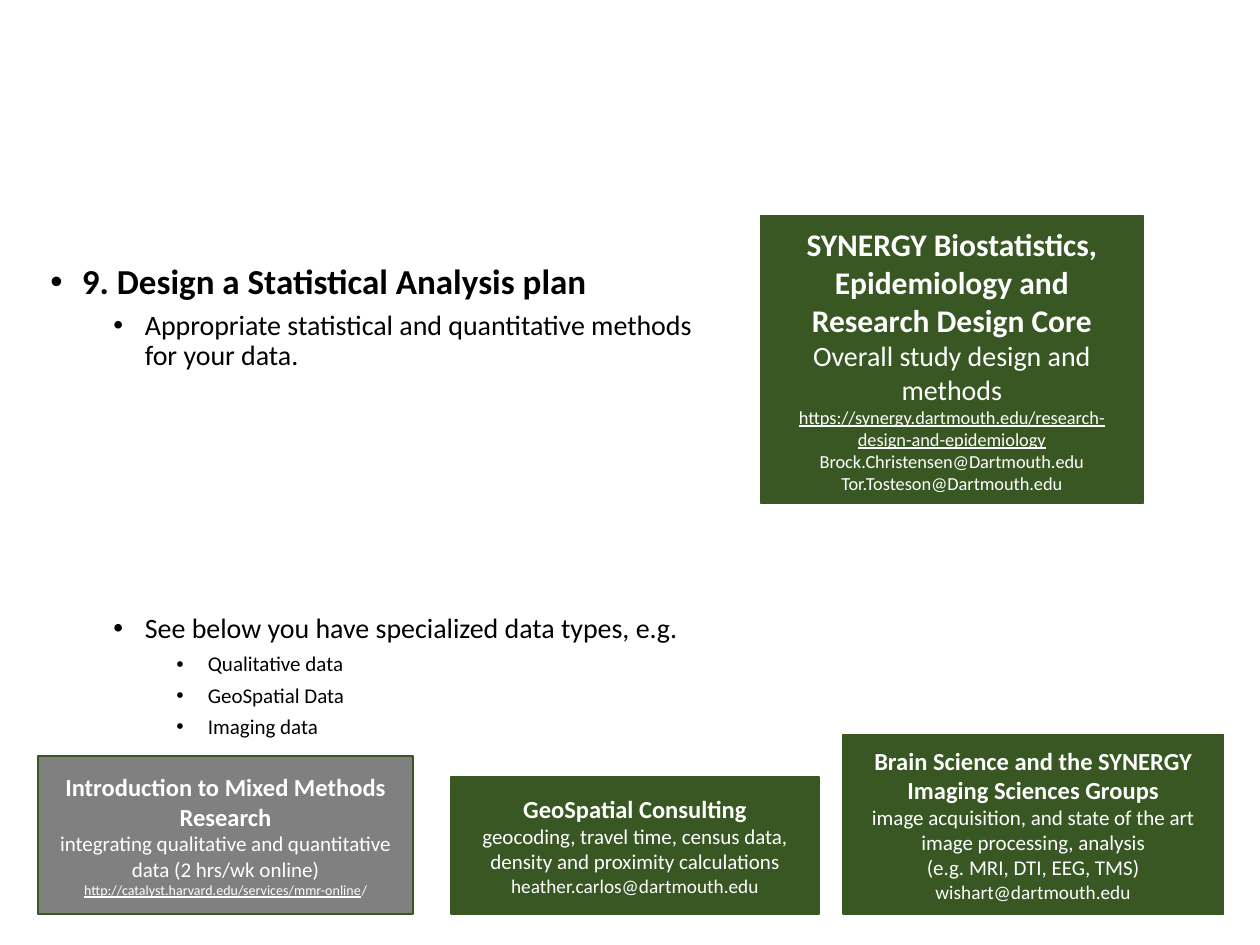
import pptx
import pptx.util
import pptx.dml.color
import pptx.enum.shapes
import pptx.enum.text
import lxml.etree
from dataclasses import dataclass

Pt = pptx.util.Pt
Inches = pptx.util.Inches
RGB = pptx.dml.color.RGBColor


@dataclass(frozen=True)
class Theme:
    font: str = "Calibri"
    ink: RGB = RGB(0, 0, 0)
    paper: RGB = RGB(255, 255, 255)
    green: RGB = RGB(0x38, 0x57, 0x23)
    grey: RGB = RGB(0x80, 0x80, 0x80)
    outline_sizes: tuple = (20, 16, 12)
    core_heading: float = 18
    core_body: float = 16
    core_contact: float = 10.5
    heading: float = 14
    body: float = 12
    contact: float = 11
    link: float = 8


theme = Theme()

deck = pptx.Presentation()
deck.slide_width, deck.slide_height = Inches(10), Inches(7.5)
column = deck.slide_width / 100
row = deck.slide_height / 100


def style(font, size, color, bold=False):
    font.name = theme.font
    font.size = Pt(size)
    font.bold = bold
    font.color.rgb = color


def add_bullet(paragraph, level):
    """Hang a round bullet a quarter inch left of the level's text."""
    properties = paragraph._p.get_or_add_pPr()
    properties.set("marL", str(Inches(0.25 + 0.5 * level)))
    properties.set("indent", str(Inches(-0.25)))
    drawing = "{" + properties.nsmap["a"] + "}"
    lxml.etree.SubElement(properties, drawing + "buFont").set("typeface", "Arial")
    lxml.etree.SubElement(properties, drawing + "buChar").set("char", "•")


slide = deck.slides.add_slide(deck.slide_layouts.get_by_name("Title and Content"))
title = slide.shapes.title.element
title.getparent().remove(title)

# Outline: level, space before, wording
outline = [
    (0, 0, "9. Design a Statistical Analysis plan"),
    (1, 5, "Appropriate statistical and quantitative methods for your data."),
    (1, 139, "See below you have specialized data types, e.g."),
    (2, 5, "Qualitative data"),
    (2, 5, "GeoSpatial Data"),
    (2, 5, "Imaging data"),
]
plan = slide.placeholders[1]
plan.left, plan.top = int(3 * column), int(27.33 * row)
plan.width, plan.height = int(53.1 * column), int(68 * row)
plan_text = plan.text_frame
plan_text.auto_size = pptx.enum.text.MSO_AUTO_SIZE.NONE
for index, (level, space, wording) in enumerate(outline):
    paragraph = plan_text.paragraphs[0] if index == 0 else plan_text.add_paragraph()
    paragraph.text = wording
    paragraph.level = level
    paragraph.line_spacing = 0.9
    paragraph.space_before = Pt(space)
    add_bullet(paragraph, level)
    style(paragraph.font, theme.outline_sizes[level], theme.ink, bold=level == 0)

# Resources: left, top, width, height in columns and rows; fill; paragraphs.
# A paragraph is a size and its runs; a run is wording, underlined, own size.
resources = [
    (35.8, 82.25, 29.2, 14.5, theme.green, [
        (theme.heading, [("GeoSpatial Consulting", False, None)]),
        (theme.body, [("geocoding, travel time, census data, density and "
                       "proximity calculations", False, None)]),
        (theme.contact, [("heather.carlos@dartmouth.edu", False, None)]),
    ]),
    (66.9, 77.75, 30.2, 19, theme.green, [
        (theme.heading, [("Brain Science and the SYNERGY Imaging Sciences Groups",
                          False, None)]),
        (theme.body, [("image acquisition, and state of the art image processing, "
                       "analysis", False, None)]),
        (theme.body, [("(e.g. MRI, DTI, EEG, TMS)", False, None)]),
        (theme.contact, [("wishart@dartmouth.edu", False, None)]),
    ]),
    (3, 80, 29.8, 16.75, theme.grey, [
        (theme.heading, [("Introduction to Mixed Methods Research", False, None)]),
        (theme.body, [
            ("integrating qualitative and quantitative data (2 hrs/wk online) ",
             False, None),
            ("http://catalyst.harvard.edu/services/mmr-online", True, theme.link),
            ("/", False, theme.link),
        ]),
    ]),
    (60.4, 22.8, 30.3, 30.5, theme.green, [
        (theme.core_heading, [("SYNERGY Biostatistics, Epidemiology and Research "
                               "Design Core", False, None)]),
        (theme.core_body, [("Overall study design and methods", False, None)]),
        (theme.core_contact, [("https://synergy.dartmouth.edu/"
                               "research-design-and-epidemiology", True, None)]),
        (theme.core_contact, [("Brock.Christensen@Dartmouth.edu", False, None)]),
        (theme.core_contact, [("Tor.Tosteson@Dartmouth.edu", False, None)]),
    ]),
]
for left, top, width, height, fill, paragraphs in resources:
    card = slide.shapes.add_shape(
        pptx.enum.shapes.MSO_SHAPE.RECTANGLE,
        int(left * column), int(top * row), int(width * column), int(height * row))
    card.shadow.inherit = False
    card.fill.solid()
    card.fill.fore_color.rgb = fill
    card.line.color.rgb = theme.green
    card.line.width = Pt(1)
    card_text = card.text_frame
    card_text.word_wrap = True
    card_text.vertical_anchor = pptx.enum.text.MSO_ANCHOR.MIDDLE
    for index, (size, runs) in enumerate(paragraphs):
        paragraph = card_text.paragraphs[0] if index == 0 else card_text.add_paragraph()
        paragraph.alignment = pptx.enum.text.PP_ALIGN.CENTER
        style(paragraph.font, size, theme.paper, bold=index == 0)
        for wording, underlined, own_size in runs:
            run = paragraph.add_run()
            run.text = wording
            if underlined:
                run.font.underline = True
            if own_size:
                run.font.size = Pt(own_size)

deck.save("out.pptx")
